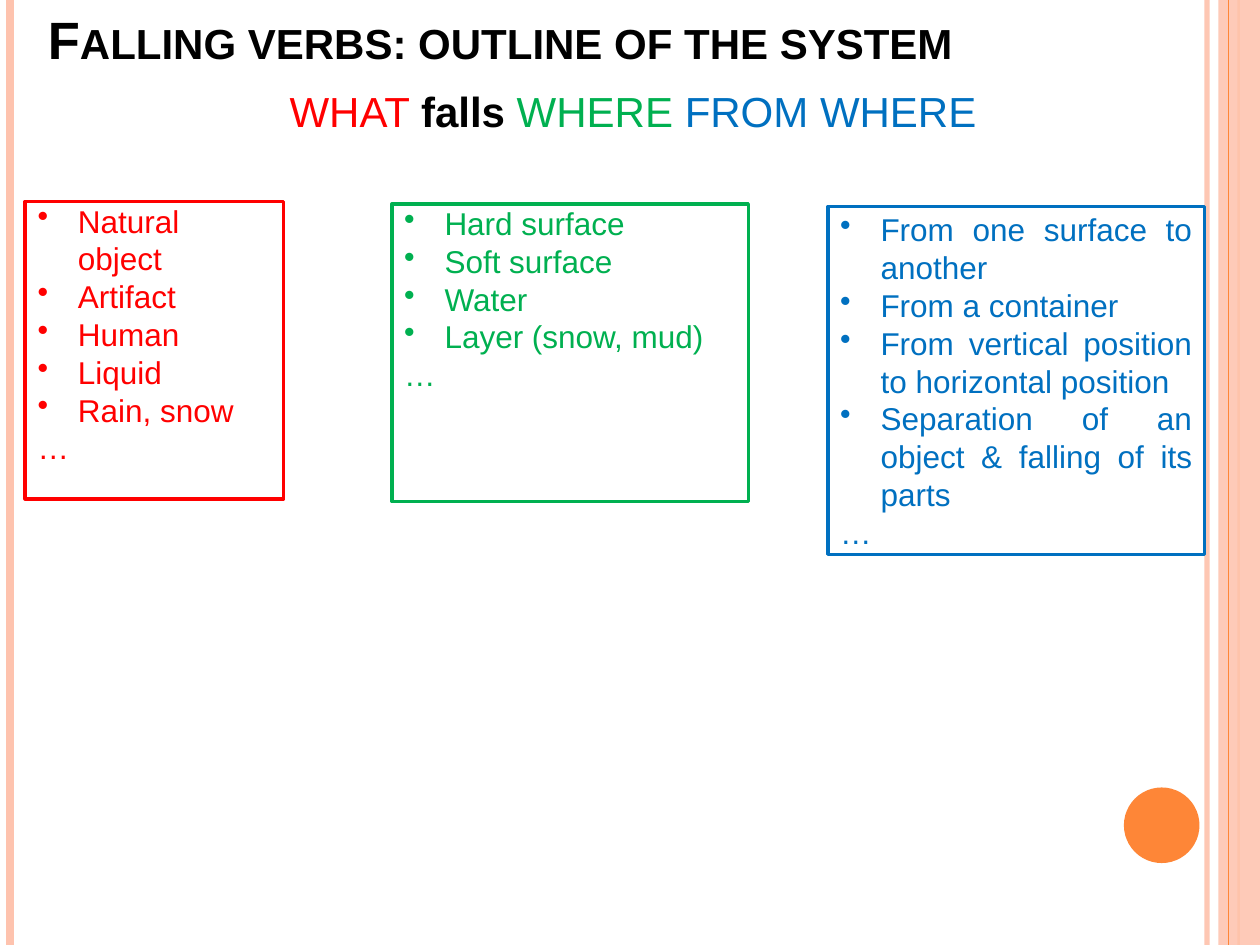
"""Build the slide that outlines the system of falling verbs."""
from lxml import etree
from pptx import Presentation
from pptx.dml.color import RGBColor
from pptx.enum.shapes import MSO_CONNECTOR, MSO_SHAPE
from pptx.enum.text import MSO_ANCHOR, PP_ALIGN
from pptx.oxml.ns import qn
from pptx.util import Inches, Pt

STRAIGHT = MSO_CONNECTOR.STRAIGHT
RECTANGLE, OVAL = MSO_SHAPE.RECTANGLE, MSO_SHAPE.OVAL
TOP, BOTTOM = MSO_ANCHOR.TOP, MSO_ANCHOR.BOTTOM
LEFT, JUSTIFY = PP_ALIGN.LEFT, PP_ALIGN.JUSTIFY
FONT = "Arial"
COLORS = {
    "black": "000000",
    "what": "FF0000",
    "where": "00B050",
    "from": "0070C0",
    "peach": "FEC3AE",
    "orange": "FE8637",
}


def rgb(name):
    return RGBColor.from_string(COLORS[name])


def set_opacity(part, percent):
    color = next(part._element.spPr.iter(qn("a:srgbClr")))
    etree.SubElement(color, qn("a:alpha"), val=str(percent * 1000))


prs = Presentation()
prs.slide_width, prs.slide_height = Inches(10), Inches(7.5)
slide = prs.slides.add_slide(prs.slide_layouts[5])
shapes = slide.shapes

band = shapes.add_shape(RECTANGLE, Inches(9.67), 0, Inches(0.33), Inches(7.5))
dot = shapes.add_shape(OVAL, Inches(8.92), Inches(6.25), Inches(0.6), Inches(0.6))
for ornament, color in ((band, "peach"), (dot, "orange")):
    ornament.shadow.inherit = False
    ornament.fill.solid()
    ornament.fill.fore_color.rgb = rgb(color)
    ornament.line.fill.background()
set_opacity(band, 87)

for x, color, width, opacity in (
    (9.58, "peach", 3, 93),
    (0.08, "peach", 4.5, 100),
    (9.83, "orange", 1.5, 10),
    (9.75, "orange", 0.75, 100),
):
    rail = shapes.add_connector(STRAIGHT, Inches(x), 0, Inches(x), Inches(7.5))
    rail.line.color.rgb = rgb(color)
    rail.line.width = Pt(width)
    set_opacity(rail, opacity)
    etree.SubElement(rail._element.spPr, qn("a:effectLst"))

title = shapes.title
title.left, title.top = Inches(0.28), Inches(0)
title.width, title.height = Inches(8.17), Inches(0.61)
title.text_frame.text = "Falling verbs: outline of the system"
title.text_frame.vertical_anchor = BOTTOM
heading = title.text_frame.paragraphs[0]
heading.alignment = LEFT
heading_font = heading.runs[0].font
heading_font.name, heading_font.size, heading_font.bold = FONT, Pt(30), True
heading_font.color.rgb = rgb("black")
heading_font._element.set("cap", "small")

formula = shapes.add_textbox(Inches(0.2), Inches(0.63), Inches(9.45), Inches(6.87))
formula.text_frame.word_wrap = True
sentence = formula.text_frame.paragraphs[0]
sentence.alignment = JUSTIFY
sentence.font.name, sentence.font.size = FONT, Pt(24)
sentence._p.get_or_add_pPr().set("marL", str(Inches(2)))
for words, color in (
    ("WHAT ", "what"),
    ("falls ", "black"),
    ("WHERE ", "where"),
    ("FROM WHERE", "from"),
):
    run = sentence.add_run()
    run.text = words
    run.font.bold = color == "black"
    run.font.color.rgb = rgb(color)

parameters = (
    ("what", (0.2, 1.6, 2.05, 2.36), 0,
     ("Natural object", "Artifact", "Human", "Liquid", "Rain, snow")),
    ("where", (3.11, 1.62, 2.83, 2.36), 0,
     ("Hard surface", "Soft surface", "Water", "Layer (snow, mud)")),
    ("from", (6.57, 1.64, 2.99, 2.76), 0.03,
     ("From one surface to another", "From a container",
      "From vertical position to horizontal position",
      "Separation of an object & falling of its parts")),
)
indent = Inches(0.32)
for color, bounds, inset, values in parameters:
    box = shapes.add_shape(RECTANGLE, *map(Inches, bounds))
    box.shadow.inherit = False
    box.fill.background()
    box.line.color.rgb = rgb(color)
    box.line.width = Pt(2)
    frame = box.text_frame
    frame.word_wrap = True
    frame.vertical_anchor = TOP
    frame.margin_top, frame.margin_bottom = Inches(inset), 0
    frame.text = "\n".join(values + ("…",))
    for paragraph in frame.paragraphs:
        paragraph.alignment = JUSTIFY
        paragraph.line_spacing = Pt(21.6)
        paragraph.font.name, paragraph.font.size = FONT, Pt(18)
        paragraph.font.color.rgb = rgb(color)
    for paragraph in frame.paragraphs[:-1]:
        properties = paragraph._p.pPr
        properties.set("marL", str(indent))
        properties.set("indent", str(-indent))
        bullet = etree.Element(qn("a:buChar"), char="•")
        properties.find(qn("a:defRPr")).addprevious(bullet)

prs.save("out.pptx")
